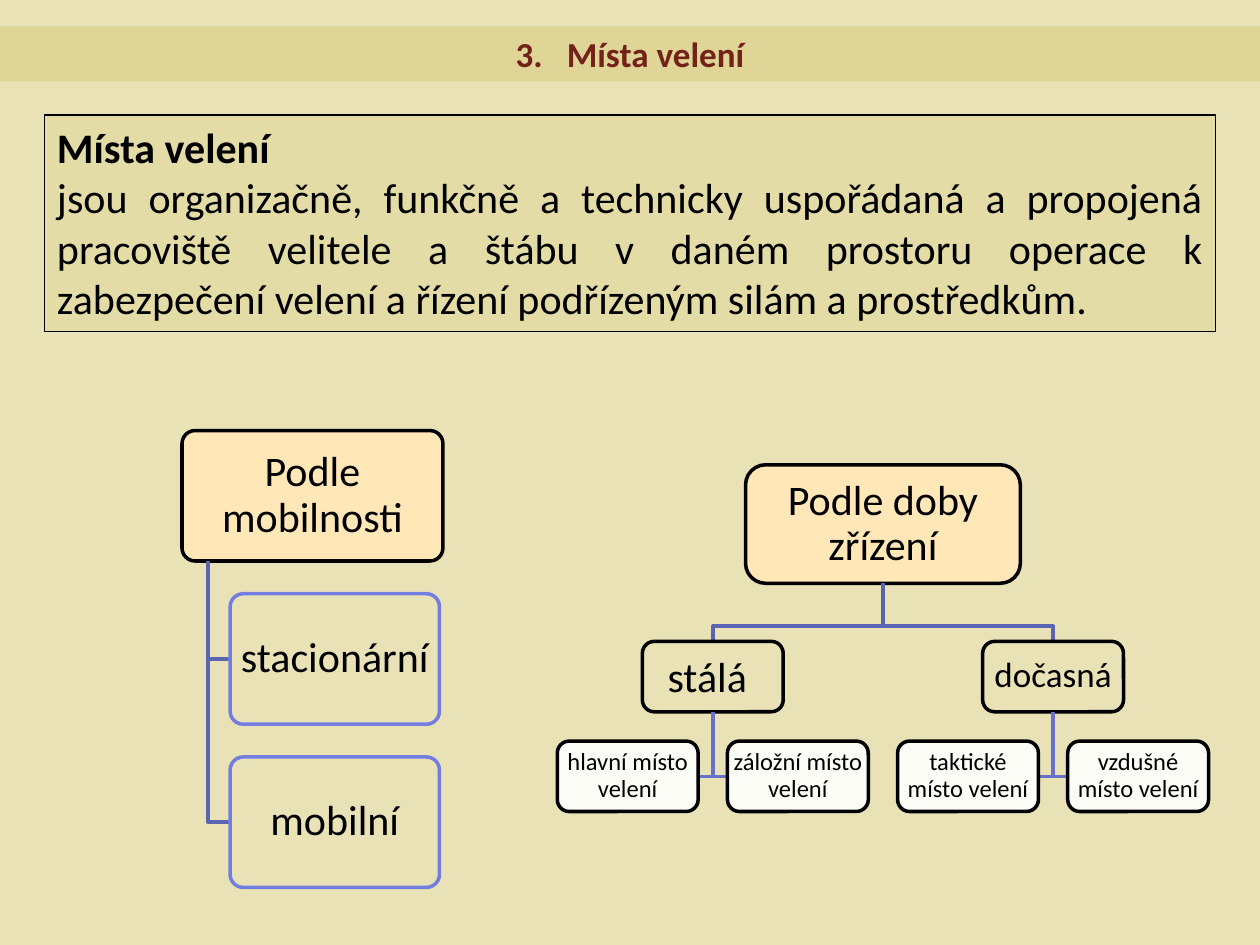
from dataclasses import dataclass

import lxml.etree
import pptx
import pptx.dml.color
import pptx.enum.shapes
import pptx.enum.text
import pptx.oxml.ns
import pptx.util

Cm, Pt = pptx.util.Cm, pptx.util.Pt
RGB = pptx.dml.color.RGBColor.from_string
SHAPE = pptx.enum.shapes.MSO_SHAPE
ALIGN = pptx.enum.text.PP_ALIGN
ANCHOR = pptx.enum.text.MSO_ANCHOR
qn = pptx.oxml.ns.qn


@dataclass(frozen=True)
class Theme:
    font: str = "Calibri"
    background: str = "E9E2B6"
    band: str = "DFD596"
    panel: str = "E4DCA6"
    root: str = "FFE7B8"
    leaf: str = "FCFCF7"
    title: str = "722219"
    ink: str = "000000"
    outline: str = "727DE0"
    trunk: str = "5B64B3"
    twig: str = "6771CB"
    large: int = 24
    medium: int = 20
    small: int = 14
    wide_space: int = 28


theme = Theme()


def add_box(x, y, w, h, text, fill, line, size, corner):
    sp = s.shapes.add_shape(SHAPE.ROUNDED_RECTANGLE, Cm(x), Cm(y), Cm(w), Cm(h))
    sp.adjustments[0] = corner
    sp.shadow.inherit = False
    sp.fill.solid()
    sp.fill.fore_color.rgb = RGB(fill)
    sp.line.color.rgb = RGB(line)
    sp.line.width = Pt(2)
    tf = sp.text_frame
    tf.word_wrap = True
    tf.vertical_anchor = ANCHOR.MIDDLE
    tf.margin_left = tf.margin_right = Cm(0.02)
    tf.margin_top = tf.margin_bottom = Cm(0.1)
    p = tf.paragraphs[0]
    p.text = text
    p.alignment = ALIGN.CENTER
    p.line_spacing = 0.9
    p.font.name = theme.font
    p.font.size = Pt(size)
    p.font.color.rgb = RGB(theme.ink)
    return sp


def add_branch(points, color):
    """Draw an open, unfilled line with right-angled bends."""
    points = [(Cm(x), Cm(y)) for x, y in points]
    builder = s.shapes.build_freeform(*points[0])
    builder.add_line_segments(points[1:], close=False)
    sp = builder.convert_to_shape()
    sp.shadow.inherit = False
    sp.fill.background()
    sp.line.color.rgb = RGB(color)
    sp.line.width = Pt(2)


prs = pptx.Presentation()
prs.slide_width, prs.slide_height = Cm(25.4), Cm(19.05)
s = prs.slides.add_slide(prs.slide_layouts[5])
s.background.fill.solid()
s.background.fill.fore_color.rgb = RGB(theme.background)

# Title band
sp = s.shapes.title
sp.left, sp.top, sp.width, sp.height = Cm(0), Cm(0.53), Cm(25.4), Cm(1.11)
sp.fill.solid()
sp.fill.fore_color.rgb = RGB(theme.band)
p = sp.text_frame.paragraphs[0]
p.text = "3.\tMísta velení"
p.alignment = ALIGN.CENTER
tabs = lxml.etree.SubElement(p._p.get_or_add_pPr(), qn("a:tabLst"))
lxml.etree.SubElement(tabs, qn("a:tab"), pos=str(Cm(1.03)), algn="l")
p.font.name = theme.font
p.font.size = Pt(theme.medium)
p.font.bold = True
p.font.color.rgb = RGB(theme.title)

# Definition
sp = s.shapes.add_shape(SHAPE.RECTANGLE, Cm(0.9), Cm(2.32), Cm(23.6), Cm(4.37))
sp.shadow.inherit = False
sp.fill.solid()
sp.fill.fore_color.rgb = RGB(theme.panel)
sp.line.color.rgb = RGB(theme.ink)
sp.line.width = Pt(0.75)
tf = sp.text_frame
tf.word_wrap = True
tf.vertical_anchor = ANCHOR.TOP
tf.text = (
    "Místa velení\n"
    "jsou organizačně, funkčně a technicky uspořádaná a propojená pracoviště "
    "velitele a štábu v daném prostoru operace k zabezpečení velení a řízení "
    "podřízeným silám a prostředkům."
)
for p in tf.paragraphs:
    p.alignment = ALIGN.JUSTIFY
    p.font.name = theme.font
    p.font.size = Pt(theme.large)
    p.font.color.rgb = RGB(theme.ink)
tf.paragraphs[0].font.bold = True

# By mobility: children hang from a trunk on the left
box_h, pitch, trunk_x, child_x = 2.63, 3.29, 4.19, 4.64
root_y = 8.68
add_box(3.67, root_y, 5.26, box_h, "Podle mobilnosti",
        theme.root, theme.ink, theme.large, 0.1)
for i, text in enumerate(["stacionární", "mobilní"], start=1):
    y = root_y + i * pitch
    mid = y + box_h / 2
    add_branch([(trunk_x, root_y + box_h), (trunk_x, mid), (child_x, mid)], theme.trunk)
    sp = add_box(child_x, y, 4.22, box_h, text,
                 theme.background, theme.outline, theme.large, 0.1)
    color = sp.fill._xPr.find(qn("a:solidFill"))[0]
    lxml.etree.SubElement(color, qn("a:alpha"), val="90000")

# By duration: a root, two groups and two leaves under each group
root_x, root_top, root_w, root_h = 17.8, 9.37, 5.54, 2.39
box_w, box_h, step = 2.84, 1.42, 3.43
bus_y, group_y, leaf_y = 12.62, 12.93, 14.94
groups = [
    (-1, "stálá", theme.large, ["hlavní místo velení", "záložní místo velení"]),
    (1, "dočasná", theme.medium, ["taktické místo velení", "vzdušné místo velení"]),
]
add_box(root_x - root_w / 2, root_top, root_w, root_h, "Podle doby zřízení",
        theme.root, theme.ink, theme.large, 0.17)
for side, name, size, leaves in groups:
    x = root_x + side * step
    add_branch([(root_x, root_top + root_h), (root_x, bus_y), (x, bus_y), (x, group_y)],
               theme.trunk)
    sp = add_box(x - box_w / 2, group_y, box_w, box_h, name,
                 theme.background, theme.ink, size, 0.17)
    if name == "stálá":
        r = sp.text_frame.paragraphs[0].add_run()
        r.text = " "
        r.font.size = Pt(theme.wide_space)
    for leaf_side, text in zip((-1, 1), leaves):
        leaf_x = x + leaf_side * step / 2
        mid = leaf_y + box_h / 2
        add_branch([(x, group_y + box_h), (x, mid), (leaf_x - leaf_side * box_w / 2, mid)],
                   theme.twig)
        add_box(leaf_x - box_w / 2, leaf_y, box_w, box_h, text,
                theme.leaf, theme.ink, theme.small, 0.17)

prs.save("out.pptx")
